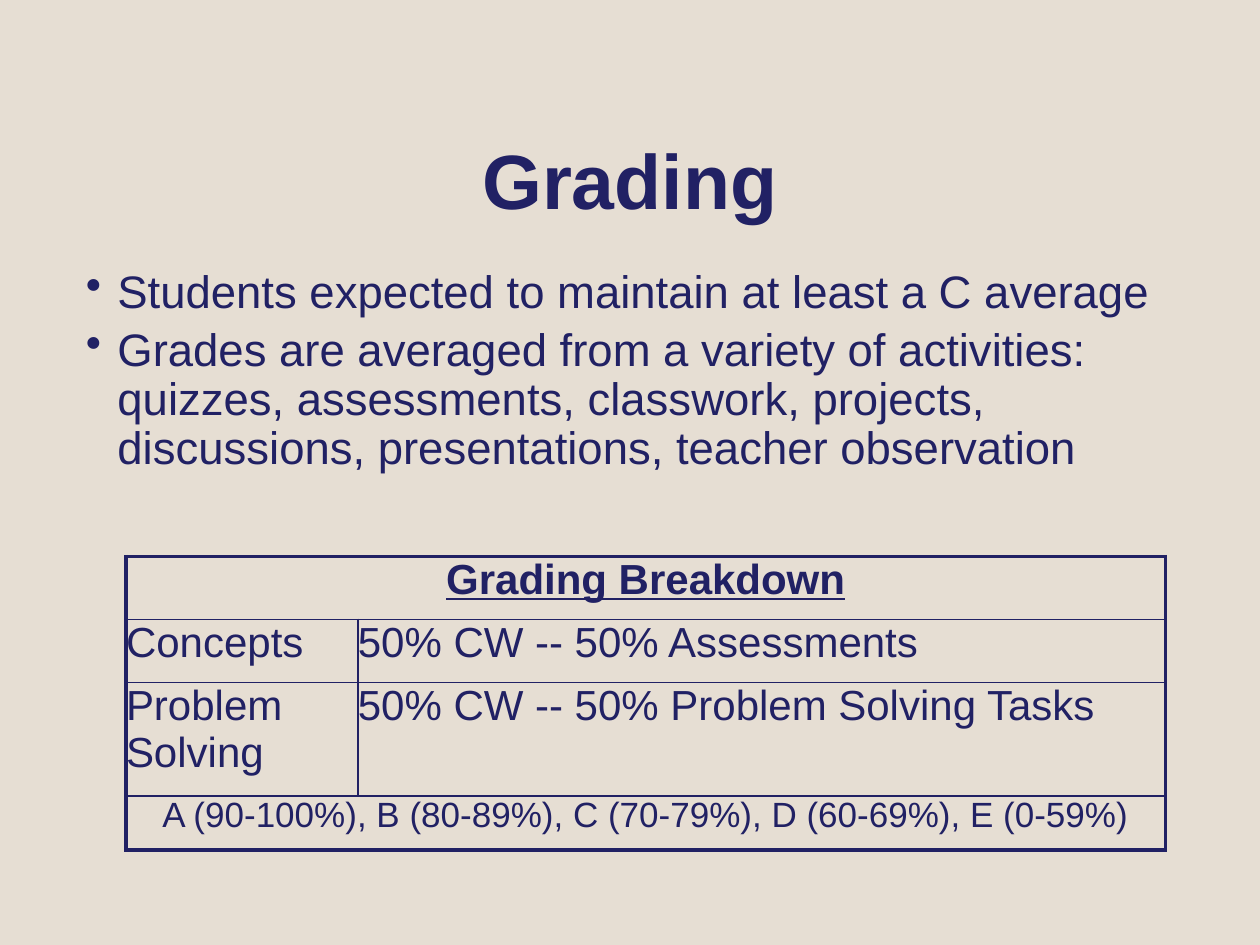
from dataclasses import dataclass, field

from pptx import Presentation
from pptx.dml.color import RGBColor
from pptx.enum.text import MSO_ANCHOR as Anchor, PP_ALIGN as Align
from pptx.oxml.ns import qn
from pptx.util import Pt
from lxml.etree import SubElement

COLORS = {"ink": "212164", "paper": "E6DED3"}
FONT = {"name": "Arial", "bold": False, "underline": False}
PAGE_WIDTH, PAGE_HEIGHT = 720, 540
COLUMNS = [132.5, 461.5]
ROWS = [36, 36, 64.8, 31]
OUTER, INNER = 2.25, 1


@dataclass
class Line:
    text: str
    size: float
    font: dict = field(default_factory=dict)
    layout: dict = field(default_factory=dict)
    bullet: str = ""


CENTER = {"alignment": Align.CENTER}
TITLE = Line("Grading", 44, {"bold": True}, CENTER)
POINTS = [
    Line("Students expected to maintain at least a C average", 26,
         layout={"level": 2, "line_spacing": 0.9}, bullet="•"),
    Line("Grades are averaged from a variety of activities: quizzes, assessments, "
         "classwork, projects, discussions, presentations, teacher observation", 26,
         layout={"level": 2, "line_spacing": 0.9, "space_before": Pt(5.2)}, bullet="•"),
]
GRADES = [
    [Line("Grading Breakdown", 24, {"bold": True, "underline": True}, CENTER)],
    [Line("Concepts", 24), Line("50% CW -- 50% Assessments", 24)],
    [Line("Problem Solving", 24), Line("50% CW -- 50% Problem Solving Tasks", 24)],
    [Line("A (90-100%), B (80-89%), C (70-79%), D (60-69%), E (0-59%)", 20, layout=CENTER)],
]


def add_color(parent, tag: str) -> None:
    """Append a colour element holding the ink colour."""
    SubElement(SubElement(parent, qn(tag)), qn("a:srgbClr"), val=COLORS["ink"])


def write_line(para, line: Line) -> None:
    """Fill one paragraph with a formatted line."""
    for name, value in line.layout.items():
        setattr(para, name, value)
    if line.bullet:
        props = para._p.get_or_add_pPr()
        props.set("marL", str(Pt(90)))
        props.set("indent", str(Pt(-18)))
        add_color(props, "a:buClr")
        SubElement(props, qn("a:buChar"), char=line.bullet)
    span = para.add_run()
    span.text = line.text
    for name, value in {**FONT, **line.font, "size": Pt(line.size)}.items():
        setattr(span.font, name, value)
    span.font.color.rgb = RGBColor.from_string(COLORS["ink"])


def add_text(page, bounds: tuple, lines: list[Line], anchor: Anchor) -> None:
    """Add a wrapping text box with one paragraph per line."""
    frame = page.shapes.add_textbox(*map(Pt, bounds)).text_frame
    frame.word_wrap = True
    frame.vertical_anchor = anchor
    for index, line in enumerate(lines):
        write_line(frame.add_paragraph() if index else frame.paragraphs[0], line)


def style_cell(cell, row: int, column: int) -> None:
    """Draw the cell borders and clear its margins and fill."""
    outer_sides = {"L": column == 0, "R": column == len(COLUMNS) - 1,
                   "T": row == 0, "B": row == len(ROWS) - 1}
    if cell.is_merge_origin:
        outer_sides["R"] = True
    props = cell._tc.get_or_add_tcPr()
    for side, is_outer in outer_sides.items():
        border = SubElement(props, qn(f"a:ln{side}"), w=str(Pt(OUTER if is_outer else INNER)))
        add_color(border, "a:solidFill")
    for side in ("left", "right", "top", "bottom"):
        setattr(cell, f"margin_{side}", 0)
    cell.fill.background()


def add_grades(page, left: float, top: float) -> None:
    """Add the grading table, merging rows that hold a single line."""
    bounds = map(Pt, (left, top, sum(COLUMNS), sum(ROWS)))
    table = page.shapes.add_table(len(ROWS), len(COLUMNS), *bounds).table
    table.first_row = table.horz_banding = False
    for column, width in zip(table.columns, COLUMNS):
        column.width = Pt(width)
    for row, (height, lines) in enumerate(zip(ROWS, GRADES)):
        table.rows[row].height = Pt(height)
        if len(lines) == 1:
            table.cell(row, 0).merge(table.cell(row, len(COLUMNS) - 1))
        for column in range(len(COLUMNS)):
            style_cell(table.cell(row, column), row, column)
        for column, line in enumerate(lines):
            write_line(table.cell(row, column).text_frame.paragraphs[0], line)


def main() -> None:
    """Build the grading slide and save it."""
    deck = Presentation()
    deck.slide_width, deck.slide_height = Pt(PAGE_WIDTH), Pt(PAGE_HEIGHT)
    page = deck.slides.add_slide(deck.slide_layouts[6])
    page.background.fill.solid()
    page.background.fill.fore_color.rgb = RGBColor.from_string(COLORS["paper"])
    add_text(page, (54, 30, 612, 102), [TITLE], Anchor.BOTTOM)
    add_text(page, (-30, 150, 708, 168), POINTS, Anchor.TOP)
    add_grades(page, 72, 318)
    deck.save("out.pptx")


if __name__ == "__main__":
    main()
